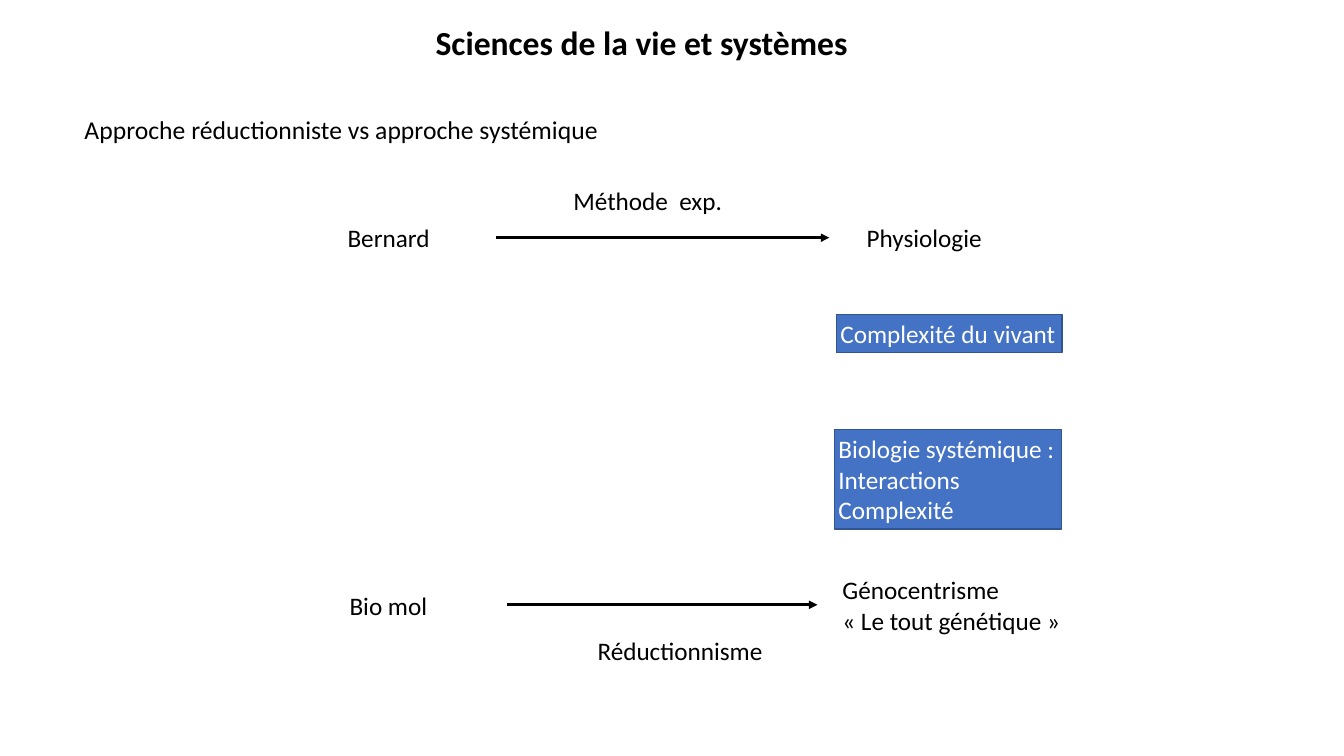
from lxml.etree import SubElement
from pptx import Presentation
from pptx.dml.color import RGBColor
from pptx.enum.shapes import MSO_CONNECTOR, MSO_SHAPE
from pptx.enum.text import MSO_ANCHOR, MSO_AUTO_SIZE, PP_ALIGN
from pptx.oxml.ns import qn
from pptx.util import Cm, Pt


def paint(color_format, value):
    color_format.rgb = RGBColor.from_string(value)


def write(frame, text, size=18, color="000000", bold=False, align=PP_ALIGN.LEFT,
          anchor=MSO_ANCHOR.MIDDLE, wrap=False, inset_x=0.1, inset_y=0.1):
    frame.auto_size = MSO_AUTO_SIZE.NONE
    frame.word_wrap = wrap
    frame.vertical_anchor = anchor
    frame.margin_left = frame.margin_right = Cm(inset_x)
    frame.margin_top = frame.margin_bottom = Cm(inset_y)
    frame.text = text
    for para in frame.paragraphs:
        para.alignment = align
        para.line_spacing = 1.0
        para.space_before = Pt(0)
        for span in para.runs:
            span.font.name = "Calibri"
            span.font.size = Pt(size)
            span.font.bold = bold
            paint(span.font.color, color)


deck = Presentation()
deck.slide_width = Cm(33.87)
deck.slide_height = Cm(19.05)
page = deck.slides.add_slide(deck.slide_layouts[5])

title = page.shapes.title
title.left, title.top, title.width, title.height = Cm(8.59), Cm(0.41), Cm(15.16), Cm(1.27)
write(title.text_frame, "Sciences de la vie et systèmes", size=24, bold=True, align=PP_ALIGN.CENTER,
      anchor=MSO_ANCHOR.TOP, wrap=True, inset_x=0.25, inset_y=0.13)

labels = [
    ("Approche réductionniste vs approche systémique", 2.03, 2.77, 13.23, 0.99, 18.3),
    ("Génocentrisme\n« Le tout génétique »", 21.13, 14.38, 5.77, 1.73, 18),
    ("Réductionnisme", 14.96, 15.9, 4.42, 0.97, 18),
    ("Bio mol", 8.71, 14.76, 2.18, 0.97, 18),
    ("Bernard", 8.66, 5.51, 2.29, 0.97, 18),
    ("Physiologie", 21.74, 5.51, 3.12, 0.97, 18),
]
for text, left, top, width, height, size in labels:
    box = page.shapes.add_textbox(Cm(left), Cm(top), Cm(width), Cm(height))
    write(box.text_frame, text, size=size)

panels = [
    ("Biologie systémique :\nInteractions\nComplexité", 21.03, 10.82, 5.72, 2.51, "4472C4", "325491", "FFFFFF"),
    ("Méthode  exp.", 14.35, 4.57, 3.99, 0.97, "FFFFFF", None, "000000"),
    ("Complexité du vivant", 21.08, 7.92, 5.69, 0.97, "4472C4", "325491", "FFFFFF"),
]
for text, left, top, width, height, fill, outline, color in panels:
    box = page.shapes.add_shape(MSO_SHAPE.RECTANGLE, Cm(left), Cm(top), Cm(width), Cm(height))
    box.shadow.inherit = False
    box.fill.solid()
    paint(box.fill.fore_color, fill)
    if outline:
        paint(box.line.color, outline)
        box.line.width = Pt(1)
    else:
        box.line.fill.background()
    write(box.text_frame, text, color=color)

for start, end, height in [(12.5, 20.9, 5.99), (12.78, 20.6, 15.24)]:
    arrow = page.shapes.add_connector(MSO_CONNECTOR.STRAIGHT, Cm(start), Cm(height), Cm(end), Cm(height))
    paint(arrow.line.color, "000000")
    arrow.line.width = Pt(2)
    SubElement(arrow.line._get_or_add_ln(), qn("a:tailEnd"), type="triangle")
    SubElement(arrow._element.spPr, qn("a:effectLst"))

deck.save("out.pptx")
